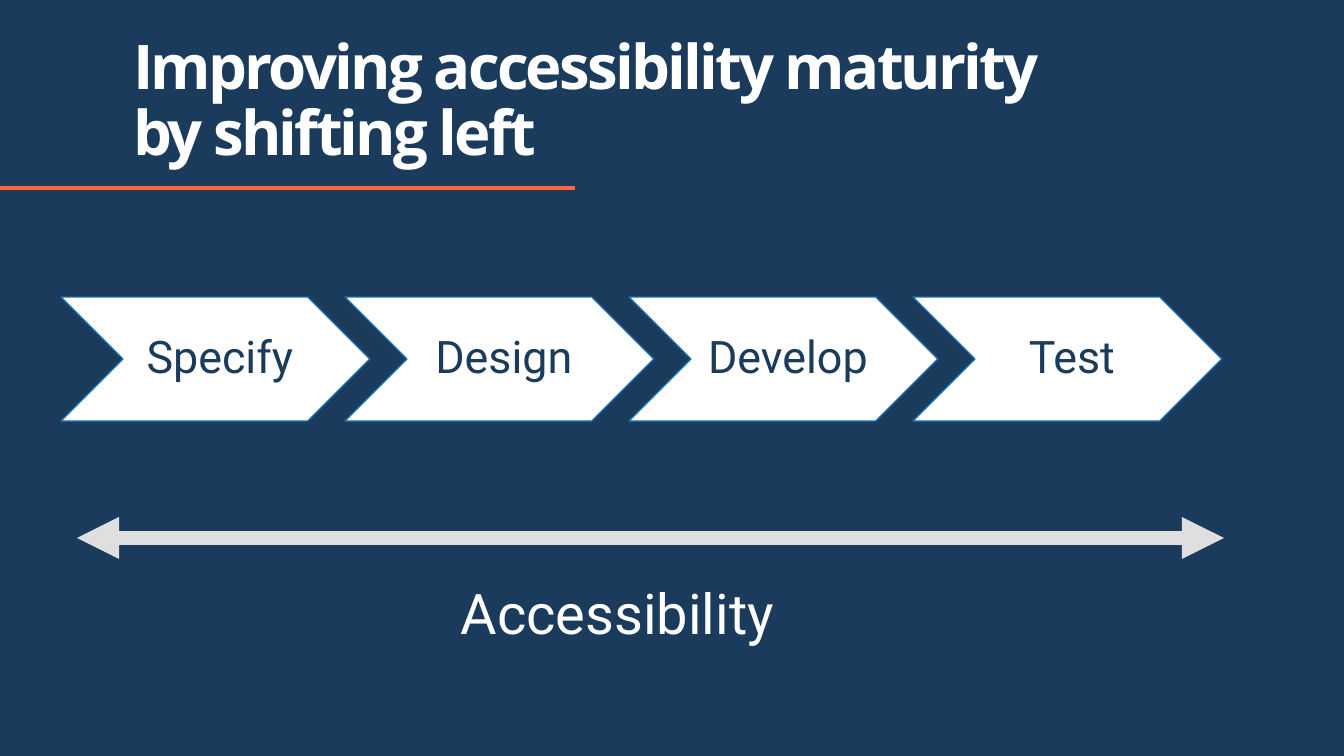
from pptx import Presentation
from pptx.dml.color import RGBColor
from pptx.enum.shapes import MSO_CONNECTOR, MSO_SHAPE
from pptx.enum.text import MSO_ANCHOR, MSO_AUTO_SIZE, PP_ALIGN
from pptx.oxml.ns import qn
from pptx.util import Pt
from lxml.etree import SubElement

TITLE = "Improving accessibility maturity by shifting left"
STAGES = ["Specify", "Design", "Develop", "Test"]
SPAN_LABEL = "Accessibility"

NAVY, WHITE, ORANGE, BLUE, GREY = "1A3B5B", "FFFFFF", "FE663B", "196AAB", "DFDFDF"
SLIDE_W, SLIDE_H = 1344, 756
TITLE_BOX = (123, 28, 947, 146)
STAGE_LEFT, STAGE_TOP, STAGE_W, STAGE_H, STAGE_STEP = 61, 297, 309, 124, 284
LABEL_BOX = (324, 574, 587, 78)
RULE_END, RULE_Y = 575, 188
ARROW_LEFT, ARROW_RIGHT, ARROW_Y = 77, 1224, 538


def px(n):
    return round(n * 12192000 / SLIDE_W)


def rgb(color):
    return RGBColor.from_string(color)


def format_text(tf, size, font, color, align, line_spacing=1.0):
    p = tf.paragraphs[0]
    p.alignment = align
    p.line_spacing = line_spacing
    r = p.runs[0]
    r.font.size = Pt(size)
    r.font.name = font
    r.font.color.rgb = rgb(color)
    return r


def add_line(slide, x1, x2, y, color, width):
    line = slide.shapes.add_connector(MSO_CONNECTOR.STRAIGHT, px(x1), px(y), px(x2), px(y))
    line.line.color.rgb = rgb(color)
    line.line.width = Pt(width)
    SubElement(line._element.spPr, qn("a:effectLst"))
    return line


def add_title(slide):
    title = slide.shapes.title
    title.left, title.top, title.width, title.height = map(px, TITLE_BOX)
    tf = title.text_frame
    tf.text = TITLE
    tf.word_wrap = True
    tf.auto_size = MSO_AUTO_SIZE.NONE
    tf.vertical_anchor = MSO_ANCHOR.BOTTOM
    r = format_text(tf, 44, "Open Sans", WHITE, PP_ALIGN.LEFT, 0.9)
    r.font.bold = True
    r.font._element.set("spc", "-200")


def add_stage(slide, index, name):
    sp = slide.shapes.add_shape(
        MSO_SHAPE.CHEVRON, px(STAGE_LEFT + index * STAGE_STEP), px(STAGE_TOP),
        px(STAGE_W), px(STAGE_H))
    sp.shadow.inherit = False
    sp.fill.solid()
    sp.fill.fore_color.rgb = rgb(WHITE)
    sp.line.color.rgb = rgb(BLUE)
    sp.line.width = Pt(1)
    tf = sp.text_frame
    tf.text = name
    tf.vertical_anchor = MSO_ANCHOR.MIDDLE
    tf.margin_left = px(14)
    tf.margin_right = tf.margin_top = tf.margin_bottom = px(5)
    format_text(tf, 32, "Roboto", NAVY, PP_ALIGN.CENTER, 0.9)


def add_span_arrow(slide):
    arrow = add_line(slide, ARROW_RIGHT, ARROW_LEFT, ARROW_Y, GREY, 10)
    ln = arrow.line._get_or_add_ln()
    for end in ("a:headEnd", "a:tailEnd"):
        SubElement(ln, qn(end), type="triangle")


def add_span_label(slide):
    tf = slide.shapes.add_textbox(*map(px, LABEL_BOX)).text_frame
    tf.text = SPAN_LABEL
    tf.word_wrap = True
    tf.auto_size = MSO_AUTO_SIZE.SHAPE_TO_FIT_TEXT
    format_text(tf, 40, "Roboto", WHITE, PP_ALIGN.CENTER)


def main():
    prs = Presentation()
    prs.slide_width, prs.slide_height = px(SLIDE_W), px(SLIDE_H)
    slide = prs.slides.add_slide(prs.slide_layouts[5])
    slide.background.fill.solid()
    slide.background.fill.fore_color.rgb = rgb(NAVY)

    add_line(slide, 0, RULE_END, RULE_Y, ORANGE, 3)
    add_title(slide)
    for index, name in enumerate(STAGES):
        add_stage(slide, index, name)
    add_span_label(slide)
    add_span_arrow(slide)
    prs.save("out.pptx")


if __name__ == "__main__":
    main()
